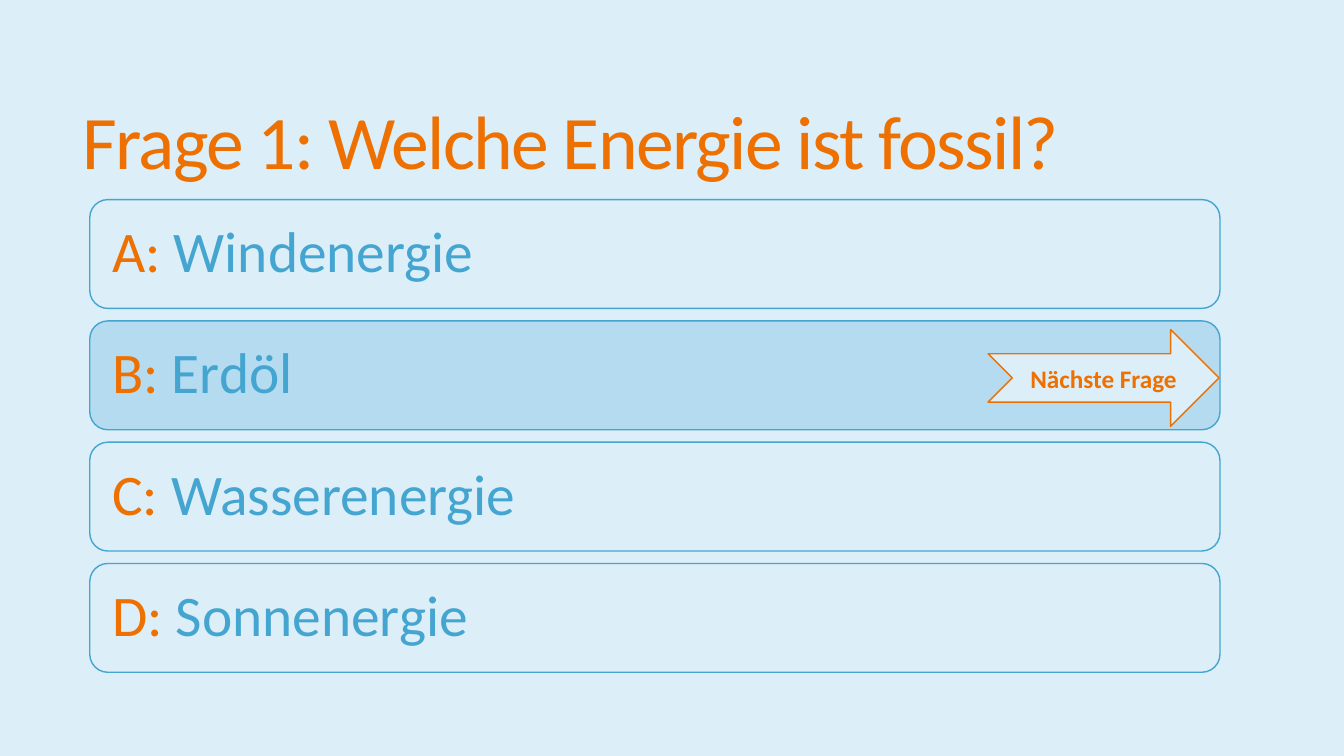
from pptx import Presentation
from pptx import util as u
from pptx.dml.color import RGBColor
from pptx.enum import shapes, text

PALE = RGBColor(0xDC, 0xEE, 0xF8)
HIGHLIGHT = RGBColor(0xB5, 0xDB, 0xF0)
BLUE = RGBColor(0x44, 0xA5, 0xD0)
ORANGE = RGBColor(0xED, 0x70, 0x00)
FONT = "Calibri"

# Answer grid: one column, equal rows
LEFT, TOP = 0.89, 1.98
ROW_WIDTH, ROW_HEIGHT, ROW_STEP = 11.21, 1.08, 1.2033
ANSWERS = ["Windenergie", "Erdöl", "Wasserenergie", "Sonnenergie"]
CORRECT = 1


def add_run(para, words, size, color, bold=False):
    span = para.add_run()
    span.text = words
    span.font.name = FONT
    span.font.size = u.Pt(size)
    span.font.color.rgb = color
    span.font.bold = bold
    return span


def add_outlined(page, kind, area, fill, line):
    box = page.shapes.add_shape(kind, *(u.Inches(v) for v in area))
    box.shadow.inherit = False
    box.fill.solid()
    box.fill.fore_color.rgb = fill
    box.line.color.rgb = line
    box.line.width = u.Pt(1)
    box.text_frame.vertical_anchor = text.MSO_ANCHOR.MIDDLE
    return box


def add_title(page, words):
    box = page.shapes.add_textbox(*(u.Inches(v) for v in (0.72, 0.55, 11.78, 1.81)))
    frame = box.text_frame
    frame.word_wrap = True
    frame.vertical_anchor = text.MSO_ANCHOR.MIDDLE
    para = frame.paragraphs[0]
    para.line_spacing = 0.85
    span = add_run(para, words, 54, ORANGE)
    span.font._element.set("spc", "-120")  # tighter letter spacing


def add_answer(page, row, words):
    area = (LEFT, TOP + row * ROW_STEP, ROW_WIDTH, ROW_HEIGHT)
    fill = HIGHLIGHT if row == CORRECT else PALE
    box = add_outlined(page, shapes.MSO_SHAPE.ROUNDED_RECTANGLE, area, fill, BLUE)
    frame = box.text_frame
    frame.word_wrap = True
    frame.margin_left = frame.margin_right = u.Inches(0.17)
    frame.margin_top = frame.margin_bottom = u.Inches(0.17)
    para = frame.paragraphs[0]
    para.alignment = text.PP_ALIGN.LEFT
    para.line_spacing = 0.9
    add_run(para, f"{'ABCD'[row]}: ", 41, ORANGE)
    add_run(para, words, 41, BLUE)


def add_next_arrow(page, words):
    area = (9.8, 3.27, 2.29, 0.96)
    arrow = add_outlined(page, shapes.MSO_SHAPE.NOTCHED_RIGHT_ARROW, area, PALE, ORANGE)
    arrow.text_frame.word_wrap = False
    para = arrow.text_frame.paragraphs[0]
    para.alignment = text.PP_ALIGN.CENTER
    add_run(para, words, 18, ORANGE, bold=True)


def main():
    deck = Presentation()
    deck.slide_width, deck.slide_height = u.Inches(13.33), u.Inches(7.5)
    page = deck.slides.add_slide(deck.slide_layouts[6])
    page.background.fill.solid()
    page.background.fill.fore_color.rgb = PALE

    # Question, answers and the link onward
    add_title(page, "Frage 1: Welche Energie ist fossil?")
    for row, words in enumerate(ANSWERS):
        add_answer(page, row, words)
    add_next_arrow(page, "Nächste Frage")
    deck.save("out.pptx")


if __name__ == "__main__":
    main()
